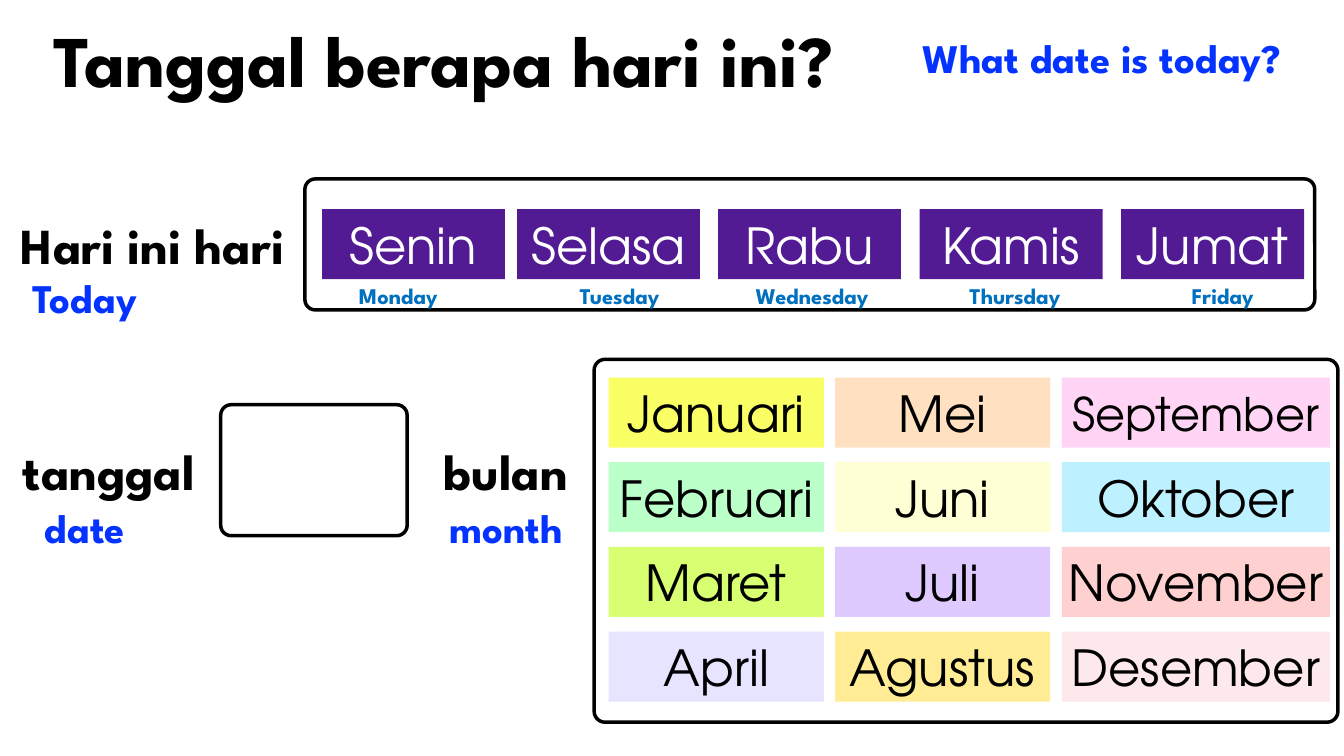
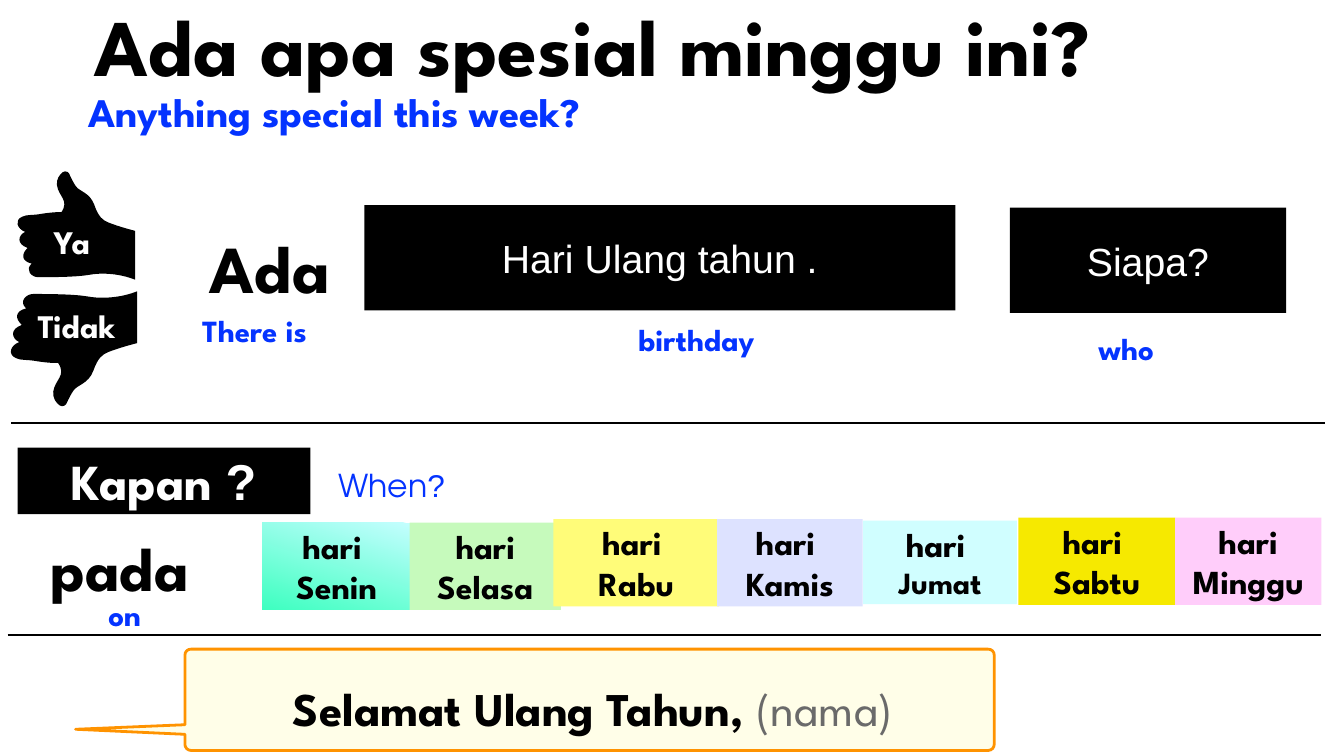
from lxml.etree import SubElement
from pptx import Presentation
from pptx.dml.color import RGBColor
from pptx.enum.shapes import MSO_CONNECTOR, MSO_SHAPE
from pptx.enum.text import MSO_ANCHOR, MSO_AUTO_SIZE, PP_ALIGN
from pptx.oxml.ns import qn
from pptx.util import Inches, Pt

COLORS = {
    "black": "000000", "white": "FFFFFF", "blue": "0433FF",
    "day_blue": "0070C0", "purple": "531B93", "grey": "6A6A6A",
    "cream": "FFFEE8", "orange": "FF9300",
    "mint_light": "C4FEFF", "mint": "3EFFC0",
}
RGB = {name: RGBColor.from_string(value) for name, value in COLORS.items()}
HEADING, ROUNDED, PLAIN = "League Spartan", "TeX Gyre Adventor", "Arial"


def add_label(slide, box, text, size, color="black", font=HEADING, fill=None,
              wrap=True, anchor=MSO_ANCHOR.MIDDLE):
    """Centred text in a box; a fill (hex string) makes the box a rectangle."""
    place = [Inches(v) for v in box]
    if fill:
        label = slide.shapes.add_shape(MSO_SHAPE.RECTANGLE, *place)
        label.shadow.inherit = False
        label.fill.solid()
        label.fill.fore_color.rgb = RGBColor.from_string(fill)
        label.line.fill.background()
    else:
        label = slide.shapes.add_textbox(*place)
    frame = label.text_frame
    frame.word_wrap = wrap
    if not wrap:
        frame.auto_size = MSO_AUTO_SIZE.SHAPE_TO_FIT_TEXT
    frame.vertical_anchor = anchor
    inset = Inches(0.05 if anchor == MSO_ANCHOR.TOP else 0.06)
    frame.margin_left = frame.margin_right = inset
    frame.margin_top = frame.margin_bottom = inset
    frame.text = text
    for paragraph in frame.paragraphs:
        paragraph.alignment = PP_ALIGN.CENTER
        paragraph.font.name = font
        paragraph.font.size = Pt(size)
        paragraph.font.bold = font == HEADING
        paragraph.font.color.rgb = RGB[color]
    return label


def add_outline(slide, points, fill):
    """Closed outline; points are (x, y), or (x1, y1, x2, y2, x, y) for a curve."""
    start_x, start_y = points[0]
    builder = slide.shapes.build_freeform(Inches(start_x), Inches(start_y), scale=1.0)
    builder.add_line_segments(
        [(Inches(x), Inches(y)) for point in points[1:]
         for x, y in zip(point[::2], point[1::2])], close=True)
    outline = builder.convert_to_shape()
    # Join the three segments of each curve into one Bezier segment
    segments = iter(list(outline._element.iter(qn("a:lnTo"))))
    for point in points[1:]:
        segment = next(segments)
        if len(point) == 6:
            segment.tag = qn("a:cubicBezTo")
            for extra in (next(segments), next(segments)):
                segment.append(extra[0])
                extra.getparent().remove(extra)
    outline.shadow.inherit = False
    outline.fill.solid()
    outline.fill.fore_color.rgb = RGB[fill]
    outline.line.fill.background()
    return outline


prs = Presentation()
prs.slide_width, prs.slide_height = Inches(26.67), Inches(15)
blank = prs.slide_layouts[6]

# Slide 1: today's date
date_slide = prs.slides.add_slide(blank)
add_label(date_slide, (0.22, 0.21, 17.17, 1.89), "Tanggal berapa hari ini?", 104, wrap=False)

for text, box in [
    ("Hari ini hari", (-0.09, 4.18, 6.24, 1.33)),
    ("tanggal", (-0.03, 8.67, 4.38, 1.33)),
    ("bulan", (8.31, 8.67, 3.46, 1.33)),
]:
    add_label(date_slide, box, text, 72)

for box, corner in [
    ((6.05, 3.55, 20.04, 2.6), 0.08),
    ((4.38, 8.03, 3.7, 2.6), 0.08),
    ((11.79, 7.13, 14.76, 7.2), 0.03),
]:
    frame_box = date_slide.shapes.add_shape(
        MSO_SHAPE.ROUNDED_RECTANGLE, *[Inches(v) for v in box])
    frame_box.adjustments[0] = corner
    frame_box.shadow.inherit = False
    frame_box.fill.background()
    frame_box.line.color.rgb = RGB["black"]
    frame_box.line.width = Pt(5)

for day, day_left, english, english_left, english_width in [
    ("Senin", 6.39, "Monday", 6.94, 1.93),
    ("Selasa", 10.26, "Tuesday", 11.34, 1.91),
    ("Rabu", 14.25, "Wednesday", 14.76, 2.71),
    ("Kamis", 18.25, "Thursday", 19.12, 2.04),
    ("Jumat", 22.25, "Friday", 23.55, 1.43),
]:
    add_label(date_slide, (day_left, 4.15, 3.63, 1.39), day, 71, "white", ROUNDED,
              COLORS["purple"])
    add_label(date_slide, (english_left, 5.54, english_width, 0.65), english, 32,
              "day_blue", wrap=False)

month_columns = [
    (12.08, 4.27, [("Januari", "FAFF65"), ("Februari", "BBFFC9"),
                   ("Maret", "D8FF72"), ("April", "E6E4FF")]),
    (16.57, 4.27, [("Mei", "FFE1C1"), ("Juni", "FFFFD5"),
                   ("Juli", "DECAFF"), ("Agustus", "FFEC94")]),
    (21.07, 5.32, [("September", "FFD4F4"), ("Oktober", "BDF1FF"),
                   ("November", "FFD0D0"), ("Desember", "FDE8EB")]),
]
for left, width, months in month_columns:
    for row, (month, tint) in enumerate(months):
        add_label(date_slide, (left, 7.49 + 1.68 * row, width, 1.39), month,
                  66 if month == "September" else 71, font=ROUNDED, fill=tint)

for text, box in [
    ("What date is today?", (16.63, 0.61, 10.47, 1.09)),
    ("Today", (0.1, 5.36, 3.17, 1.09)),
    ("date", (0.1, 9.92, 3.17, 1.09)),
    ("month", (8.46, 9.92, 3.17, 1.09)),
]:
    add_label(date_slide, box, text, 58, "blue", anchor=MSO_ANCHOR.TOP)

# Slide 2: anything special this week
week_slide = prs.slides.add_slide(blank)
add_label(week_slide, (-1.64, -0.15, 26.81, 2.05), "Ada apa spesial minggu ini?", 115)
add_label(week_slide, (0.57, 1.67, 12.12, 1.08), "Anything special this week?", 58, "blue",
          anchor=MSO_ANCHOR.TOP)

for text, box in [
    ("Hari Ulang tahun .", (7.23, 4.07, 11.73, 2.09)),
    ("Siapa?", (20.04, 4.12, 5.48, 2.09)),
]:
    add_label(week_slide, box, text, 56, "white", PLAIN, COLORS["black"])

bubble = add_outline(week_slide, [
    (3.79, 12.88), (3.72, 12.88, 3.67, 12.93, 3.67, 13), (3.67, 14.38), (1.5, 14.47),
    (3.67, 14.57), (3.67, 14.77), (3.67, 14.83, 3.72, 14.89, 3.79, 14.89), (19.61, 14.89),
    (19.68, 14.89, 19.73, 14.83, 19.73, 14.77), (19.73, 13),
    (19.73, 12.93, 19.68, 12.88, 19.61, 12.88),
], "cream")
bubble.line.color.rgb = RGB["orange"]
bubble.line.width = Pt(4)
greeting = add_label(week_slide, (3.49, 13.36, 16.55, 1.36), "Selamat Ulang Tahun, ", 67)
name_slot = greeting.text_frame.paragraphs[0].add_run()
name_slot.text = "(nama)"
name_slot.font.bold = False
name_slot.font.color.rgb = RGB["grey"]

thumb_up = [
    (1.29, 3.4), (1.28, 3.4, 1.26, 3.41, 1.24, 3.42), (1.18, 3.47, 1.12, 3.55, 1.13, 3.67),
    (1.16, 3.9, 1.38, 3.97, 1.22, 4.21), (1.22, 4.21, 1.1, 4.2, 0.84, 4.24),
    (0.63, 4.28, 0.54, 4.25, 0.44, 4.3), (0.28, 4.37, 0.34, 4.54, 0.5, 4.6),
    (0.36, 4.67, 0.32, 4.84, 0.55, 4.92), (0.42, 5.04, 0.42, 5.18, 0.63, 5.23),
    (0.49, 5.35, 0.62, 5.5, 0.76, 5.5), (1.87, 5.5, 1.69, 5.43, 2.04, 5.43),
    (2.42, 5.43, 2.68, 5.55, 2.68, 5.55), (2.68, 4.58), (2.68, 4.58, 2.36, 4.5, 2.14, 4.41),
    (2.05, 4.37, 1.96, 4.32, 1.87, 4.06), (1.78, 3.82, 1.58, 3.8, 1.51, 3.7),
    (1.47, 3.65, 1.41, 3.53, 1.37, 3.44), (1.36, 3.42, 1.33, 3.4, 1.29, 3.4),
]
# The lower hand mirrors the upper one, slightly larger
thumb_down = [
    tuple(8.06 - (v - 3.4) * 2.28 / 2.15 if i % 2 else 0.22 + (v - 0.35) * 2.51 / 2.34
          for i, v in enumerate(point))
    for point in thumb_up
]
for hand, answer, box in [
    (thumb_up, "Ya", (0.95, 4.34, 0.96, 0.9)),
    (thumb_down, "Tidak", (0.62, 6.01, 1.8, 0.9)),
]:
    add_outline(week_slide, hand, "black")
    add_label(week_slide, box, answer, 47, "white", wrap=False)

add_label(week_slide, (3.91, 4.43, 2.89, 1.73), "Ada", 96, wrap=False)
add_label(week_slide, (0.69, 10.46, 3.37, 1.59), "pada", 88, wrap=False)
for text, box in [
    ("There is", (3.19, 6.04, 3.72, 1.03)),
    ("birthday", (11.96, 6.21, 3.72, 1.03)),
    ("who", (20.49, 6.4, 3.72, 1.03)),
    ("on", (1.43, 11.68, 2.09, 1.03)),
]:
    add_label(week_slide, box, text, 44, "blue")

for text, left, top, width, height, tint in [
    ("hari \nSenin", 5.2, 10.37, 2.96, 1.73, COLORS["mint"]),
    ("hari Selasa", 8.13, 10.37, 3, 1.73, "C6FABC"),
    ("hari \nRabu", 10.98, 10.3, 3.29, 1.73, "FFFC79"),
    ("hari \nKamis", 14.23, 10.3, 2.89, 1.73, "DDE2FF"),
    ("hari \nJumat", 17.13, 10.33, 3.05, 1.66, "D0FEFF"),
    ("hari \nSabtu", 20.21, 10.27, 3.11, 1.73, "F6E900"),
    ("hari Minggu", 23.32, 10.27, 2.9, 1.73, "FFCDFA"),
]:
    day_card = add_label(week_slide, (left, top, width, height), text, 48, fill=tint)
    if text.endswith("Senin"):
        day_card.fill.gradient()
        day_card.fill.gradient_angle = 253
        for stop, shade in zip(day_card.fill.gradient_stops, ("mint_light", "mint")):
            stop.color.rgb = RGB[shade]
    elif text.endswith("Jumat"):
        day_card.text_frame.paragraphs[1].font.size = Pt(44)

when_card = add_label(week_slide, (0.35, 8.88, 5.81, 1.32), "Kapan ", 72, "white",
                      fill=COLORS["black"])
when_english = add_label(week_slide, (5.91, 9.1, 3.72, 1.03), "When", 45, "blue", ROUNDED)
for question in (when_card, when_english):
    mark = question.text_frame.paragraphs[0].add_run()
    mark.text = "?"
    mark.font.name = PLAIN

for left, right, y in [(0.22, 26.3, 8.39), (0.15, 26.22, 12.6)]:
    divider = week_slide.shapes.add_connector(
        MSO_CONNECTOR.STRAIGHT, Inches(left), Inches(y), Inches(right), Inches(y))
    divider.line.color.rgb = RGB["black"]
    divider.line.width = Pt(2)
    SubElement(divider._element.spPr, qn("a:effectLst"))

prs.save("out.pptx")
